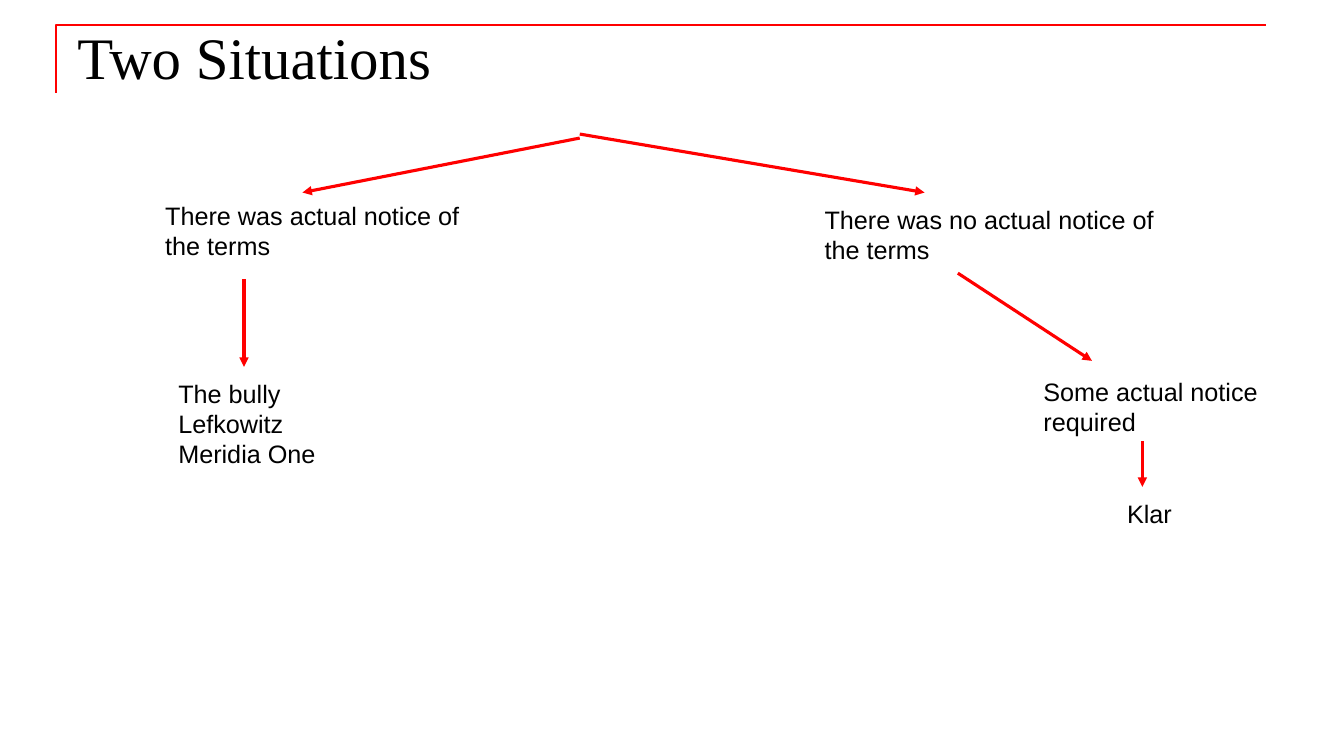
from dataclasses import dataclass

from lxml import etree
from pptx import Presentation
from pptx.dml.color import RGBColor
from pptx.enum.shapes import MSO_CONNECTOR
from pptx.enum.text import MSO_ANCHOR
from pptx.oxml.ns import qn
from pptx.util import Inches, Pt

STRAIGHT = MSO_CONNECTOR.STRAIGHT
TOP = MSO_ANCHOR.TOP


@dataclass(frozen=True)
class Theme:
    """Hold the colours, fonts and sizes of the slide."""
    ink: RGBColor = RGBColor(0, 0, 0)
    red: RGBColor = RGBColor(255, 0, 0)
    head: str = "Times New Roman"
    body: str = "Arial"
    large: int = 42
    small: int = 18
    rule: float = 1.5
    arrow: float = 2.25


THEME = Theme()


def add_text(slide, box, words, font=THEME.body, size=THEME.small):
    """Place wrapped text in the box."""
    frame = slide.shapes.add_textbox(*map(Inches, box)).text_frame
    frame.word_wrap = True
    frame.vertical_anchor = TOP
    frame.text = words
    for par in frame.paragraphs:
        for run in par.runs:
            run.font.name = font
            run.font.size = Pt(size)
            run.font.color.rgb = THEME.ink


def add_arrow(slide, start, end):
    """Draw a red arrow from start to end."""
    ends = map(Inches, (*start, *end))
    arrow = slide.shapes.add_connector(STRAIGHT, *ends)
    arrow.line.color.rgb = THEME.red
    arrow.line.width = Pt(THEME.arrow)
    props = arrow.line._get_or_add_ln()
    etree.SubElement(props, qn("a:tailEnd"), type="triangle")
    etree.SubElement(arrow._element.spPr, qn("a:effectLst"))


def add_title(slide, box, words):
    """Draw the corner rule along the box and set the title inside it."""
    left, top, width, height = box
    pen = slide.shapes.build_freeform(Inches(left), Inches(top + height))
    corner = [(left, top), (left + width, top)]
    pen.add_line_segments(
        [(Inches(x), Inches(y)) for x, y in corner], close=False)
    rule = pen.convert_to_shape()
    rule.shadow.inherit = False
    rule.fill.background()
    rule.line.color.rgb = THEME.red
    rule.line.width = Pt(THEME.rule)
    area = (left + 0.11, top - 0.09, width, 1.25)
    add_text(slide, area, words, THEME.head, THEME.large)


def add_tree(slide, box):
    """Lay out the notes and arrows from the top left of the box."""
    left, top, _, _ = box
    notes = [
        (0, 0.61, 3.42, 0.71, "There was actual notice of the terms"),
        (6.54, 0.65, 3.67, 0.71, "There was no actual notice of the terms"),
        (0.13, 2.37, 2.08, 1.01, "The bully\nLefkowitz\nMeridia One"),
        (8.71, 2.35, 2.92, 0.71, "Some actual notice required"),
        (9.54, 3.56, 1.83, 0.4, "Klar"),
    ]
    arrows = [
        (4.21, 0.04, 1.46, 0.58),
        (4.21, 0, 7.63, 0.58),
        (0.88, 1.44, 0.88, 2.31),
        (7.96, 1.38, 9.29, 2.25),
        (9.79, 3.05, 9.79, 3.5),
    ]
    for x, y, width, height, words in notes:
        add_text(slide, (left + x, top + y, width, height), words)
    for x, y, end, low in arrows:
        add_arrow(slide, (left + x, top + y), (left + end, top + low))


def main():
    """Build and save the slide."""
    deck = Presentation()
    deck.slide_width = Inches(13.33)
    deck.slide_height = Inches(7.5)
    slide = deck.slides.add_slide(deck.slide_layouts[6])
    add_title(slide, (0.56, 0.25, 12, 0.67), "Two Situations")
    add_tree(slide, (1.54, 1.33, 11.63, 3.96))
    deck.save("out.pptx")


if __name__ == "__main__":
    main()
